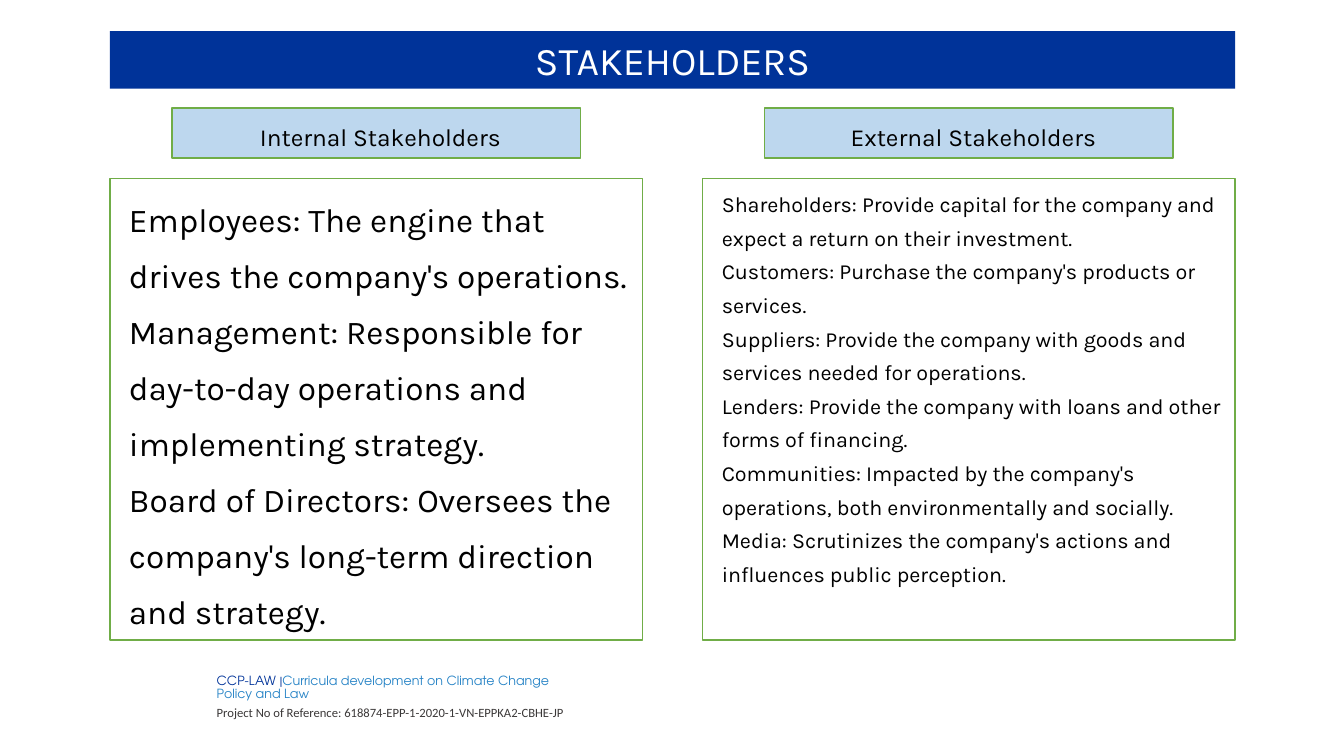
from pptx import Presentation
from pptx.dml.color import RGBColor
from pptx.enum.shapes import MSO_SHAPE
from pptx.enum.text import MSO_ANCHOR, PP_ALIGN
from pptx.util import Inches, Pt

COLORS = {"navy": "003399", "white": "FFFFFF", "black": "000000", "green": "70AD47",
          "pale": "BDD7EE", "sky": "2683C6", "gray": "3B3838"}
TITLE = "STAKEHOLDERS"
GROUPS = [
    ("Internal Stakeholders", 23.8, 1.4, [
        "Employees: The engine that drives the company's operations.",
        "Management: Responsible for day-to-day operations and implementing strategy.",
        "Board of Directors: Oversees the company's long-term direction and strategy.",
    ]),
    ("External Stakeholders", 15.4, 1.3, [
        "Shareholders: Provide capital for the company and expect a return on their investment.",
        "Customers: Purchase the company's products or services.",
        "Suppliers: Provide the company with goods and services needed for operations.",
        "Lenders: Provide the company with loans and other forms of financing.",
        "Communities: Impacted by the company's operations, both environmentally and socially.",
        "Media: Scrutinizes the company's actions and influences public perception.",
    ]),
]
FOOTER = [
    ("TeX Gyre Adventor", 0, [("CCP-LAW |", "navy"),
                              ("Curricula development on Climate Change Policy and Law", "sky")]),
    ("Calibri", 3, [("Project No of Reference: 618874-EPP-1-2020-1-VN-EPPKA2-CBHE-JP", "gray")]),
]
LEFT, WIDTH = 1.09, 11.16
PANEL_W, HEAD_W = 5.28, 4.05


def rgb(name):
    return RGBColor.from_string(COLORS[name])


def add_box(s, at, fill, line, lines, size, color, align, spacing=1.0, indent=0):
    sp = s.shapes.add_shape(MSO_SHAPE.RECTANGLE, *map(Inches, at))
    sp.shadow.inherit = False
    sp.fill.solid()
    sp.fill.fore_color.rgb = rgb(fill)
    if line:
        sp.line.color.rgb = rgb(line)
        sp.line.width = Pt(1)
    else:
        sp.line.fill.background()
    tf = sp.text_frame
    tf.word_wrap = True
    tf.vertical_anchor = MSO_ANCHOR.TOP
    tf.text = "\n".join(lines)
    for p in tf.paragraphs:
        p.alignment = align
        p.line_spacing = spacing
        if indent:
            p.level = 1
            pPr = p._p.get_or_add_pPr()
            pPr.set("marL", str(Inches(indent)))
            pPr.set("indent", "0")
        p.font.name, p.font.size = "Karla", Pt(size)
        p.font.color.rgb = rgb(color)


def add_footer(s):
    tbl = s.shapes.add_table(1, 2, *map(Inches, (1.3, 6.67, 4.52, 0.52))).table
    tbl.first_row = tbl.horz_banding = False
    for col, width in zip(tbl.columns, (0.78, 3.74)):
        col.width = Inches(width)
    for cell in tbl.iter_cells():
        cell.fill.background()
        cell.margin_left = cell.margin_right = Inches(0.07)
        cell.margin_top = cell.margin_bottom = 0
    cell = tbl.cell(0, 1)
    cell.vertical_anchor = MSO_ANCHOR.MIDDLE
    tf = cell.text_frame
    for i, (font, before, runs) in enumerate(FOOTER):
        p = tf.add_paragraph() if i else tf.paragraphs[0]
        p.line_spacing = 1.07
        p.space_before = Pt(before)
        p.font.name, p.font.size = font, Pt(9)
        for text, color in runs:
            r = p.add_run()
            r.text = text
            r.font.color.rgb = rgb(color)


def main():
    """Build the stakeholders slide."""
    prs = Presentation()
    prs.slide_width, prs.slide_height = Inches(13.33), Inches(7.5)
    s = prs.slides.add_slide(prs.slide_layouts[6])
    add_footer(s)
    add_box(s, (LEFT, 0.31, WIDTH, 0.57), "navy", None, [TITLE], 28, "white", PP_ALIGN.CENTER)
    for i, (heading, size, spacing, lines) in enumerate(GROUPS):
        x = LEFT + i * (WIDTH - PANEL_W)
        add_box(s, (x, 1.77, PANEL_W, 4.58), "white", "green", lines, size, "black",
                PP_ALIGN.LEFT, spacing, 0.09)
        add_box(s, (x + (PANEL_W - HEAD_W) / 2, 1.07, HEAD_W, 0.5), "pale", "green", [heading],
                17.5, "black", PP_ALIGN.CENTER, 1.3, 0.09)
    prs.save("out.pptx")


if __name__ == "__main__":
    main()
